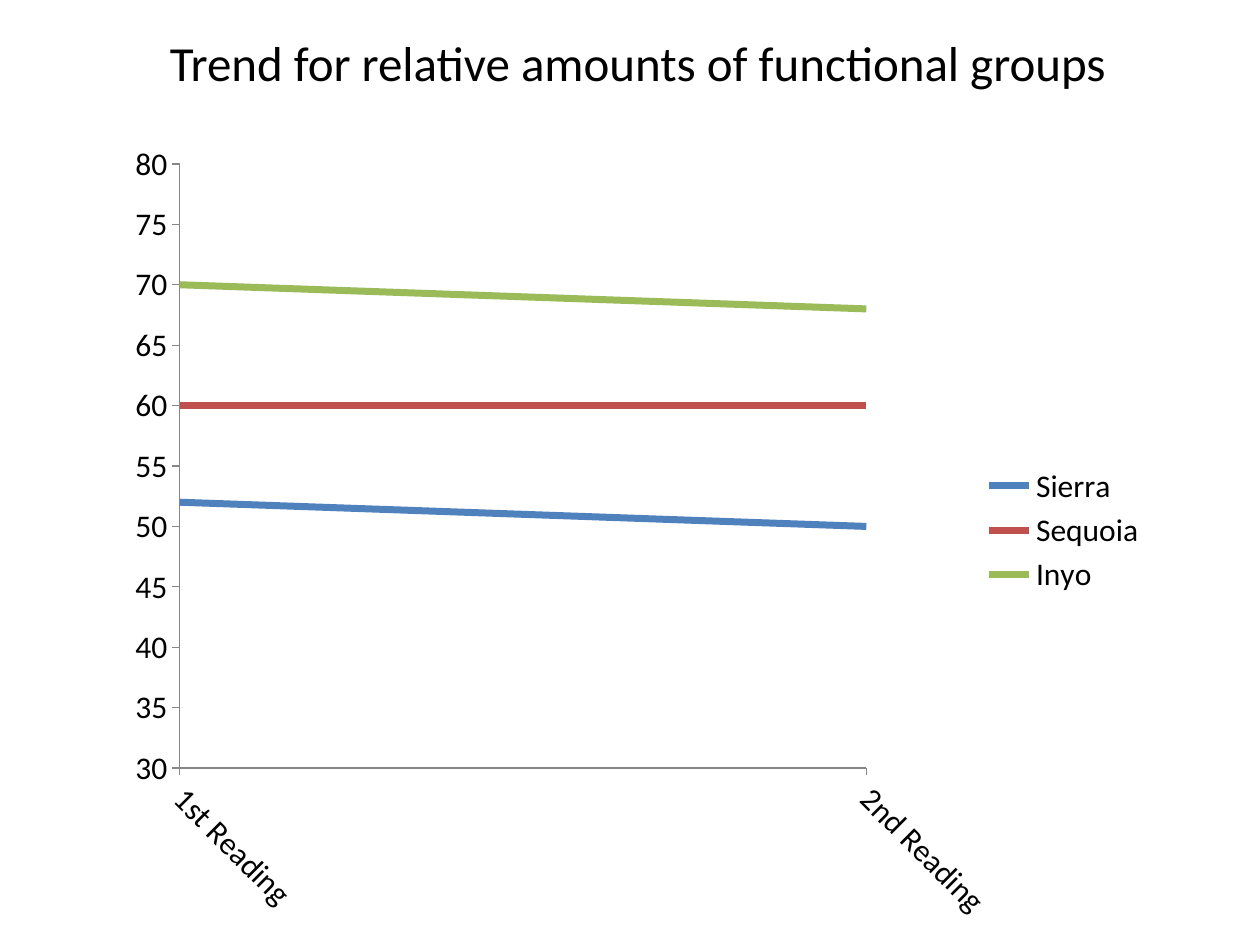
from dataclasses import dataclass

from lxml import etree
from pptx import Presentation
from pptx.chart.data import CategoryChartData
from pptx.dml.color import RGBColor
from pptx.enum.chart import (
    XL_CHART_TYPE, XL_LEGEND_POSITION, XL_MARKER_STYLE, XL_TICK_MARK)
from pptx.enum.text import MSO_AUTO_SIZE
from pptx.oxml.ns import qn
from pptx.util import Pt

LINE = XL_CHART_TYPE.LINE
RIGHT = XL_LEGEND_POSITION.RIGHT
BARE = XL_MARKER_STYLE.NONE
OUT, NONE = XL_TICK_MARK.OUTSIDE, XL_TICK_MARK.NONE
GROW = MSO_AUTO_SIZE.SHAPE_TO_FIT_TEXT
FONT, BLACK, GRAY = "Calibri", "000000", "868686"


@dataclass
class Trend:
    name: str
    vals: tuple[float, ...]
    color: str


@dataclass
class Box:
    left: float
    top: float
    width: float
    height: float

    def points(self) -> tuple[Pt, ...]:
        return Pt(self.left), Pt(self.top), Pt(self.width), Pt(self.height)


READINGS = ("1st Reading", "2nd Reading")
TRENDS = (
    Trend("Sierra", (52, 50), "4F81BD"),
    Trend("Sequoia", (60, 60), "C0504D"),
    Trend("Inyo", (70, 68), "9BBB59"),
)
CHART = Box(54, 72, 608.4, 462.2)
PLOT = Box(48.7, 21.7, 392.4, 345.3)  # inside the chart
TITLE = Box(90, 15.1, 555.8, 41)


def rgb(code: str) -> RGBColor:
    return RGBColor.from_string(code)


def style(font, size: float, color: str = BLACK) -> None:
    font.name, font.size = FONT, Pt(size)
    font.color.rgb = rgb(color)


def add_text(slide, box: Box, text: str, *, size: float, color: str = BLACK) -> None:
    shape = slide.shapes.add_textbox(*box.points())
    frame = shape.text_frame
    frame.word_wrap = False
    frame.auto_size = GROW
    run = frame.paragraphs[0].add_run()
    run.text = text
    style(run.font, size, color)


def style_axis(axis, size: float) -> None:
    axis.has_major_gridlines = False
    axis.major_tick_mark, axis.minor_tick_mark = OUT, NONE
    axis.format.line.color.rgb = rgb(GRAY)
    axis.format.line.width = Pt(0.75)
    style(axis.tick_labels.font, size)


def start_on_axis(axis) -> None:
    """Let the lines start on the value axis."""
    root = axis._element
    cross = root.find(qn("c:crossBetween"))
    if cross is None:
        cross = etree.Element(qn("c:crossBetween"))
        root.find(qn("c:majorUnit")).addprevious(cross)
    cross.set("val", "midCat")


def set_plot(chart, box: Box, plot: Box) -> None:
    """Fix the inner plot area as fractions of the chart."""
    area = chart.plots[0]._element.getparent()
    for old in area.findall(qn("c:layout")):
        area.remove(old)
    layout = etree.Element(qn("c:layout"))
    manual = etree.SubElement(layout, qn("c:manualLayout"))
    parts = dict(
        layoutTarget="inner", xMode="edge", yMode="edge",
        x=plot.left / box.width, y=plot.top / box.height,
        w=plot.width / box.width, h=plot.height / box.height)
    for tag, val in parts.items():
        etree.SubElement(manual, qn(f"c:{tag}")).set("val", str(val))
    area.insert(0, layout)


def add_trends(slide, box: Box, plot: Box, trends: tuple[Trend, ...],
               size: float) -> None:
    data = CategoryChartData()
    data.categories = READINGS
    for trend in trends:
        data.add_series(trend.name, trend.vals)
    chart = slide.shapes.add_chart(LINE, *box.points(), data).chart
    chart.has_title = False
    style(chart.font, size)

    # Axes, with slanted reading labels
    cats, vals = chart.category_axis, chart.value_axis
    for axis in (cats, vals):
        style_axis(axis, size)
    vals.minimum_scale, vals.maximum_scale, vals.major_unit = 30, 80, 5
    start_on_axis(vals)
    body = cats._element.find(qn("c:txPr")).find(qn("a:bodyPr"))
    body.set("rot", "2700000")

    # Legend
    chart.has_legend = True
    chart.legend.position = RIGHT
    chart.legend.include_in_layout = False
    style(chart.legend.font, size)

    # Lines
    chart.plots[0].vary_by_categories = False
    for line, trend in zip(chart.plots[0].series, trends):
        line.smooth = False
        line.marker.style = BARE
        line.format.line.color.rgb = rgb(trend.color)
        line.format.line.width = Pt(4)
    set_plot(chart, box, plot)


def main() -> None:
    deck = Presentation()
    deck.slide_width, deck.slide_height = Pt(720), Pt(540)
    slide = deck.slides.add_slide(deck.slide_layouts[6])
    add_trends(slide, CHART, PLOT, TRENDS, 18)
    add_text(slide, TITLE, "Trend for relative amounts of functional groups", size=28)
    deck.save("out.pptx")


if __name__ == "__main__":
    main()
